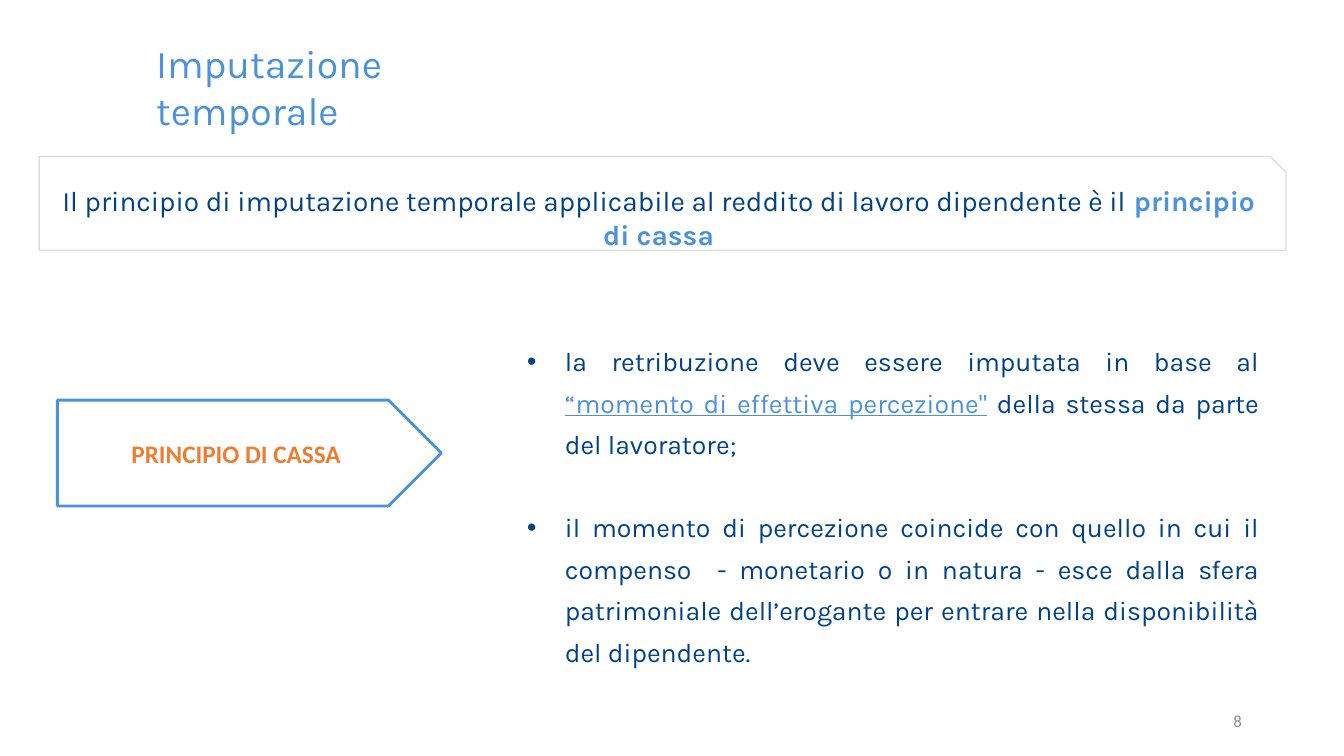
from dataclasses import dataclass

import pptx
import pptx.dml.color
import pptx.enum.shapes
import pptx.enum.text
import pptx.oxml
import pptx.oxml.ns
import pptx.util
from lxml import etree

Pt = pptx.util.Pt
SHAPES = pptx.enum.shapes.MSO_SHAPE
ALIGN = pptx.enum.text.PP_ALIGN
ANCHOR = pptx.enum.text.MSO_ANCHOR


@dataclass(frozen=True)
class Theme:
    navy: str = "004288"
    blue: str = "4B92DB"
    orange: str = "ED7D31"
    grey: str = "8C8C8C"
    border: str = "DDDDDD"
    white: str = "FFFFFF"
    body_font: str = "Karla"
    label_font: str = "Calibri"
    title_size: float = 28
    statement_size: float = 20
    bullet_size: float = 19
    label_size: float = 18
    number_size: float = 12


THEME = Theme()


def rgb(value):
    return pptx.dml.color.RGBColor.from_string(value)


def add_run(paragraph, text, size, color, font=THEME.body_font, bold=None, underline=None):
    run = paragraph.add_run()
    run.text = text
    run.font.size = Pt(size)
    run.font.name = font
    run.font.color.rgb = rgb(color)
    run.font.bold = bold
    run.font.underline = underline


def add_text_frame(slide, left, top, width, height, anchor=ANCHOR.TOP):
    frame = slide.shapes.add_textbox(Pt(left), Pt(top), Pt(width), Pt(height)).text_frame
    frame.word_wrap = True
    frame.vertical_anchor = anchor
    return frame


def add_panel(slide, kind, left, top, width, height, line_color, line_width):
    """Add a white outlined shape and return its text frame."""
    panel = slide.shapes.add_shape(kind, Pt(left), Pt(top), Pt(width), Pt(height))
    panel.shadow.inherit = False
    panel.fill.solid()
    panel.fill.fore_color.rgb = rgb(THEME.white)
    panel.line.color.rgb = rgb(line_color)
    panel.line.width = Pt(line_width)
    frame = panel.text_frame
    frame.word_wrap = True
    frame.vertical_anchor = ANCHOR.MIDDLE
    frame.paragraphs[0].alignment = ALIGN.CENTER
    return frame


def format_bullet(paragraph, indent):
    paragraph.alignment = ALIGN.JUSTIFY
    paragraph.line_spacing = 1.3
    properties = paragraph._p.get_or_add_pPr()
    properties.set("marL", str(Pt(indent)))
    properties.set("indent", str(-Pt(indent)))
    qn = pptx.oxml.ns.qn
    etree.SubElement(properties, qn("a:buFont")).set("typeface", "Arial")
    etree.SubElement(properties, qn("a:buChar")).set("char", "•")


def main():
    deck = pptx.Presentation()
    deck.slide_width, deck.slide_height = Pt(960), Pt(540)
    slide = deck.slides.add_slide(deck.slide_layouts[6])

    # Title
    title = add_text_frame(slide, 104.4, 24.5, 293.8, 41)
    add_run(title.paragraphs[0], "Imputazione temporale", THEME.title_size, THEME.blue)

    # Explanation of the principle
    explanation = add_text_frame(slide, 369.4, 236.2, 537, 214.6)
    percezione, coincidenza = explanation.paragraphs[0], explanation.add_paragraph()
    for bullet in (percezione, coincidenza):
        format_bullet(bullet, 27)
    coincidenza.space_before = Pt(29.6)
    size = THEME.bullet_size
    add_run(percezione, "la retribuzione deve essere imputata in base al ", size, THEME.navy)
    add_run(percezione, "“momento di effettiva percezione\"", size, THEME.blue, underline=True)
    add_run(percezione, " della stessa da parte del lavoratore;", size, THEME.navy)
    add_run(coincidenza, "il momento di percezione coincide con quello in cui il compenso  - monetario "
            "o in natura - esce dalla sfera patrimoniale dell’erogante per entrare nella "
            "disponibilità del dipendente.", size, THEME.navy)

    # Statement across the slide, set low in its frame
    statement = add_panel(slide, SHAPES.SNIP_1_RECTANGLE, 28, 111.8, 890.6, 67, THEME.border, 1)
    statement.margin_top = Pt(18)
    sentence = statement.paragraphs[0]
    add_run(sentence, "Il principio di imputazione temporale applicabile al reddito di lavoro "
            "dipendente è il ", THEME.statement_size, THEME.navy)
    add_run(sentence, "principio di cassa", THEME.statement_size, THEME.blue, bold=True)

    # Arrow label
    label = add_panel(slide, SHAPES.PENTAGON, 41, 285.8, 274.3, 75.6, THEME.blue, 2)
    add_run(label.paragraphs[0], "PRINCIPIO DI CASSA", THEME.label_size, THEME.orange,
            font=THEME.label_font, bold=True)

    # Slide number
    number = add_text_frame(slide, 678.2, 500.4, 216, 28.8, ANCHOR.MIDDLE).paragraphs[0]
    number.alignment = ALIGN.RIGHT
    add_run(number, "8", THEME.number_size, THEME.grey, font=THEME.label_font)

    deck.save("out.pptx")


if __name__ == "__main__":
    main()
